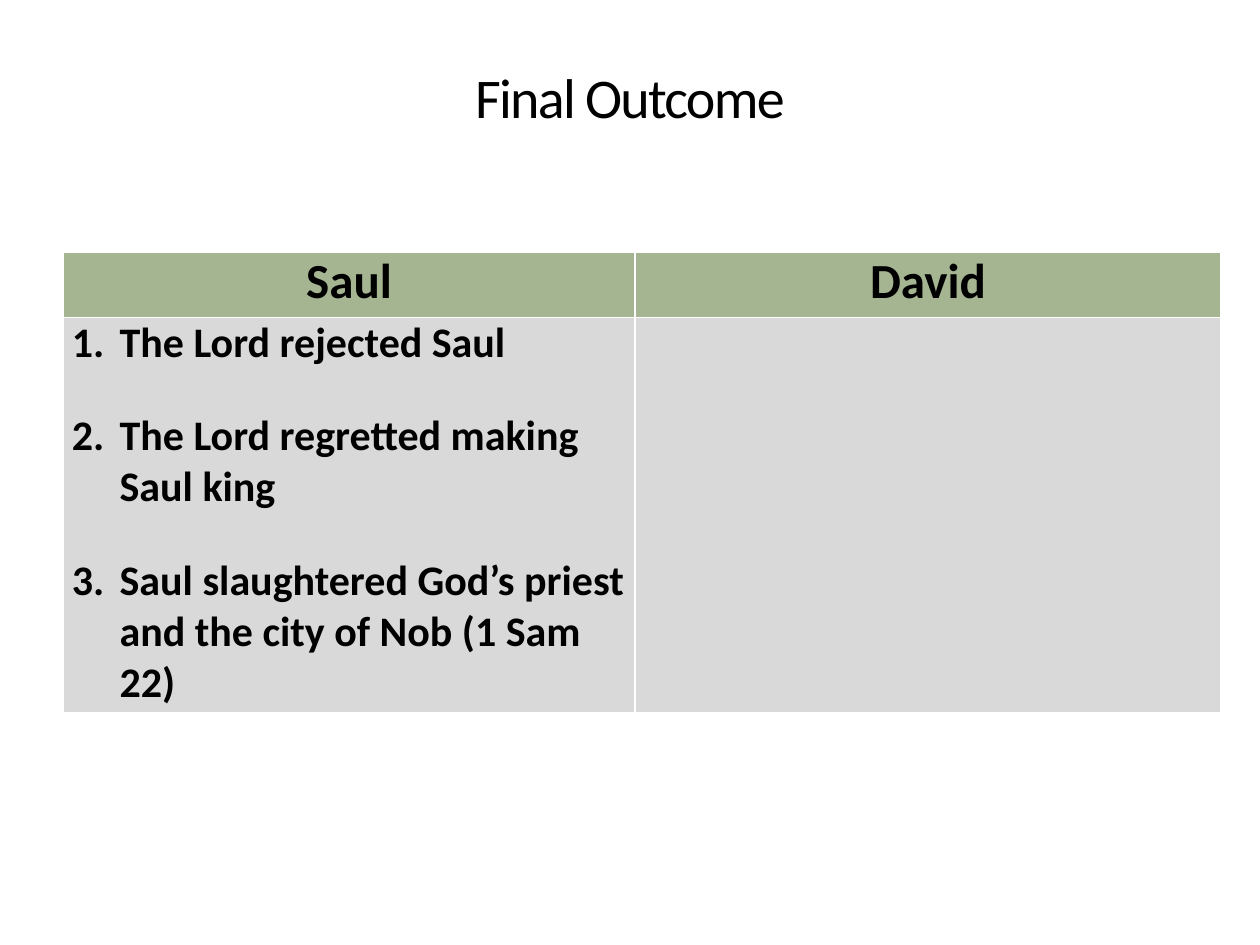
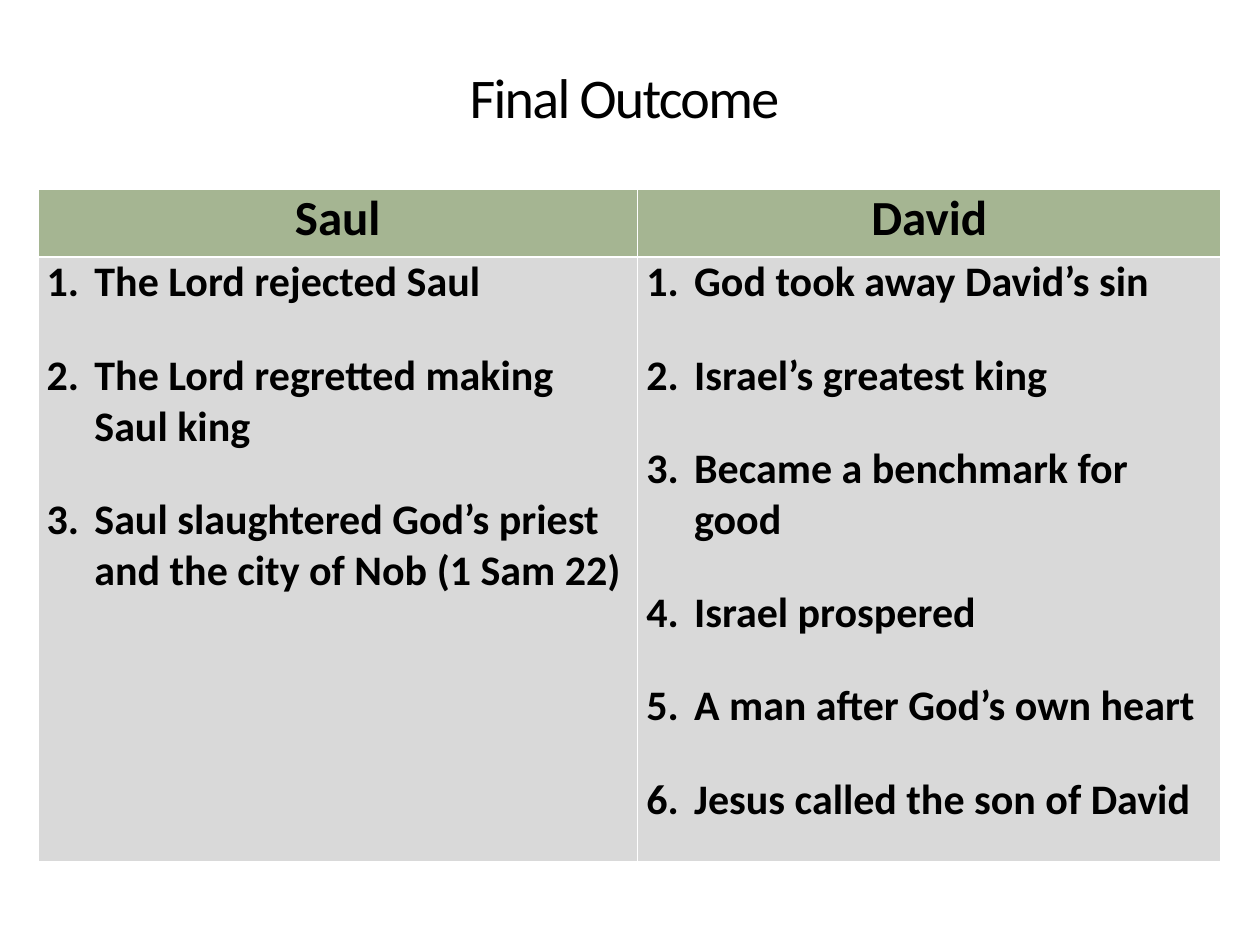
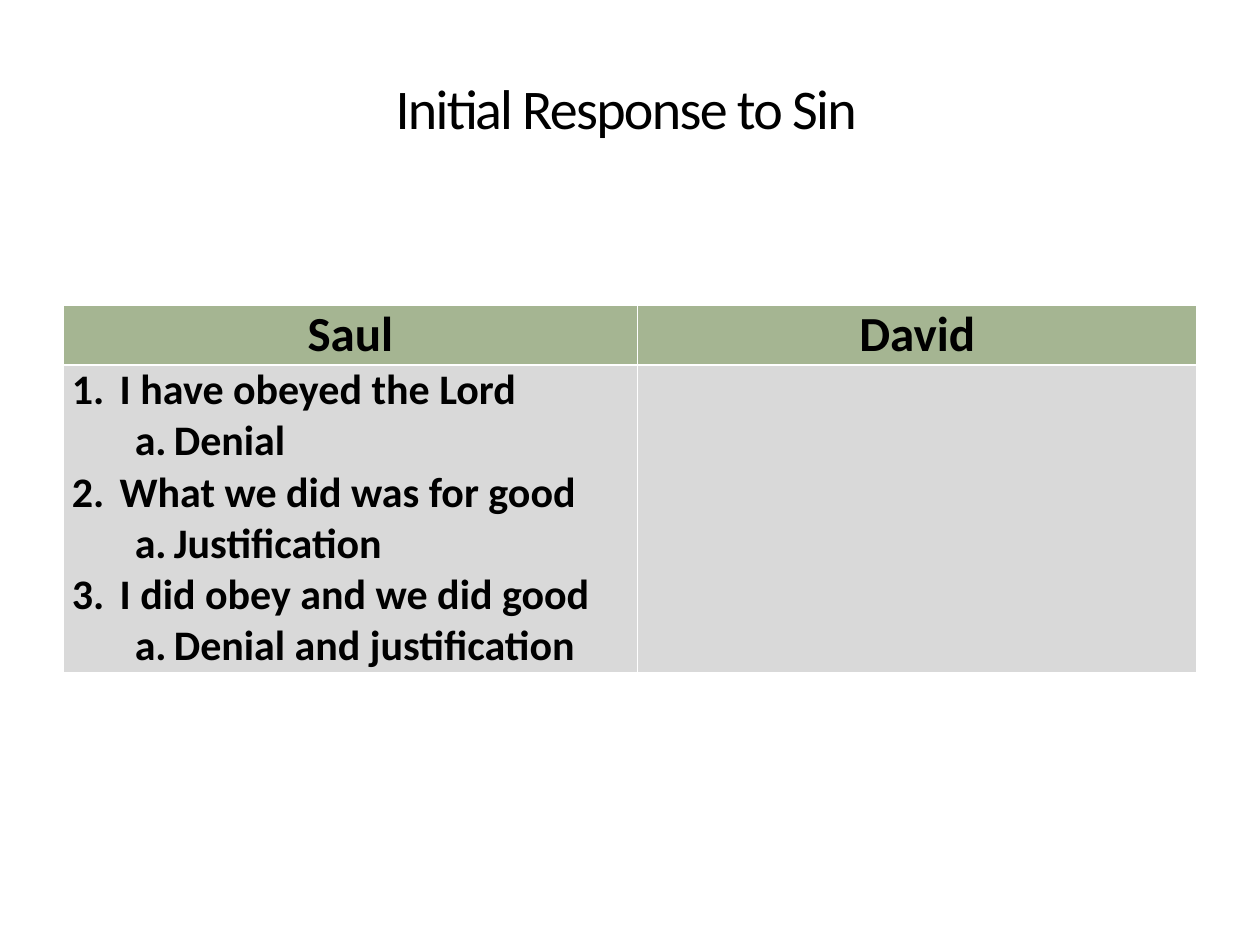
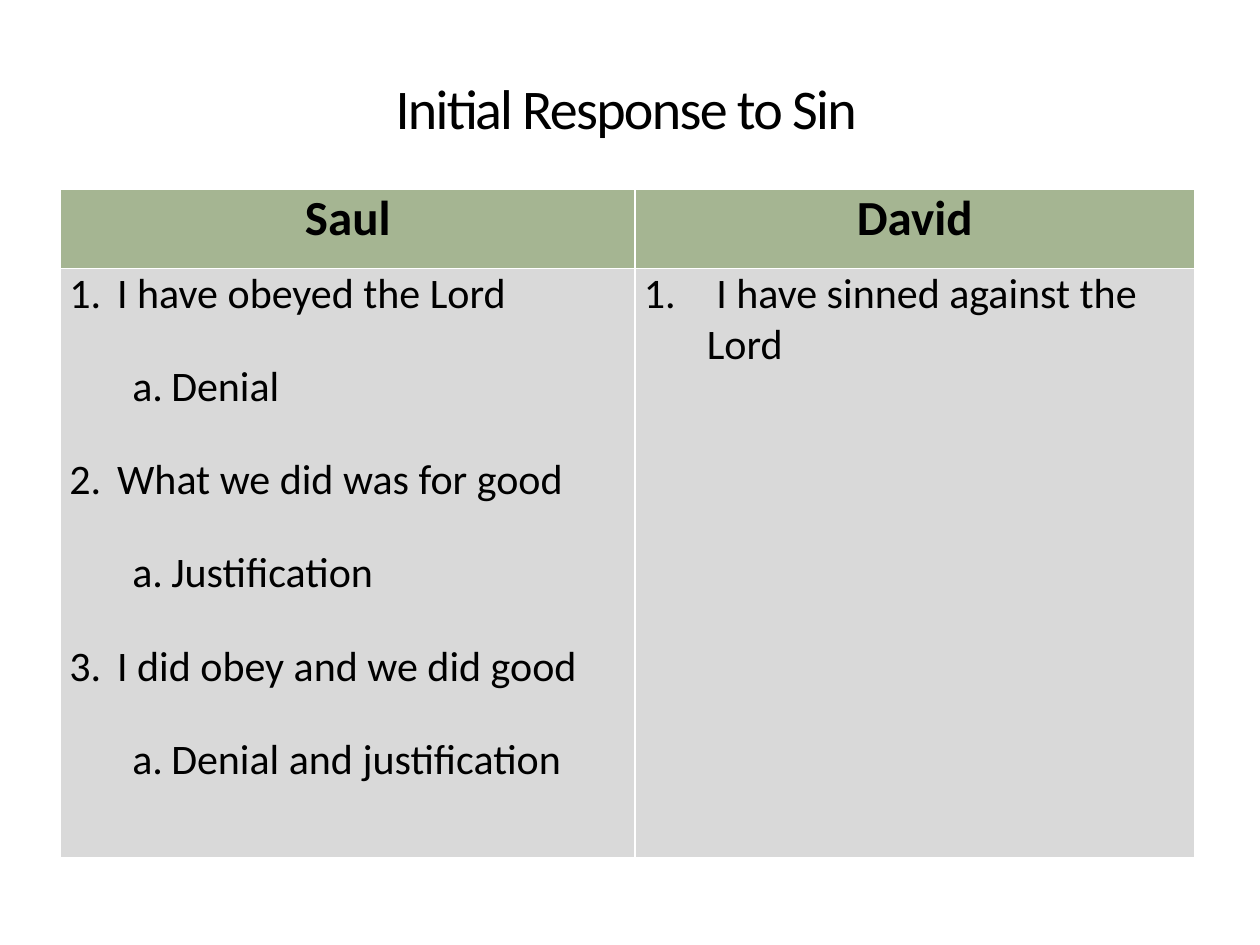
from dataclasses import dataclass

from lxml import etree
from pptx import Presentation
from pptx.dml.color import RGBColor
from pptx.enum.text import MSO_ANCHOR, PP_ALIGN
from pptx.oxml import parse_xml
from pptx.oxml.ns import nsdecls, qn
from pptx.util import Inches, Pt


@dataclass(frozen=True)
class Theme:
    font: str = "Calibri"
    text: RGBColor = RGBColor(0x00, 0x00, 0x00)
    header_fill: RGBColor = RGBColor(0xA5, 0xB5, 0x92)
    body_fill: RGBColor = RGBColor(0xD9, 0xD9, 0xD9)
    title_outline: str = "E0DDB1"
    title_size: int = 32
    header_size: int = 28
    list_size: int = 24
    cell_margin: float = 0.07
    item_gap: int = 12


THEME = Theme()
TITLE_ONLY = 5
HEADINGS = ("Saul", "David")

# Numbering scheme, left margin and hanging indent of each list level
LIST_LEVELS = (("arabicPeriod", 0.38, 0.38), ("alphaLcPeriod", 0.81, 0.31))
WIDE_LEVELS = (("arabicPeriod", 0.5, 0.5),)

# List items as (level, wording)
SAUL_OUTCOME = [
    (0, "The Lord rejected Saul"),
    (0, "The Lord regretted making Saul king"),
    (0, "Saul slaughtered God’s priest and the city of Nob (1 Sam 22)"),
]
DAVID_OUTCOME = [
    (0, "God took away David’s sin"),
    (0, "Israel’s greatest king"),
    (0, "Became a benchmark for good"),
    (0, "Israel prospered"),
    (0, "A man after God’s own heart"),
    (0, "Jesus called the son of David"),
]
SAUL_RESPONSE = [
    (0, "I have obeyed the Lord"),
    (1, "Denial"),
    (0, "What we did was for good"),
    (1, "Justification"),
    (0, "I did obey and we did good"),
    (1, "Denial and justification"),
]
DAVID_RESPONSE = [(0, " I have sinned against the Lord")]


def style_runs(paragraph, size, bold):
    for run in paragraph.runs:
        run.font.name = THEME.font
        run.font.size = Pt(size)
        run.font.bold = bold
        run.font.color.rgb = THEME.text


def add_title(slide, wording, left, top, width=9.38, height=0.75):
    title = slide.shapes.title
    title.left, title.top = Inches(left), Inches(top)
    title.width, title.height = Inches(width), Inches(height)
    title.text_frame.text = wording
    title.text_frame.vertical_anchor = MSO_ANCHOR.BOTTOM
    heading = title.text_frame.paragraphs[0]
    heading.alignment = PP_ALIGN.CENTER
    style_runs(heading, THEME.title_size, False)
    # Tight letter spacing and a faint outline
    properties = heading.runs[0].font._element
    properties.set("spc", "-100")
    properties.insert(0, parse_xml(
        f'<a:ln {nsdecls("a")} w="3175"><a:solidFill>'
        f'<a:srgbClr val="{THEME.title_outline}"><a:alpha val="25000"/></a:srgbClr>'
        '</a:solidFill><a:prstDash val="solid"/></a:ln>'))


def number_paragraph(paragraph, scheme, margin, hanging):
    properties = paragraph._p.get_or_add_pPr()
    properties.set("marL", str(Inches(margin)))
    properties.set("indent", str(-Inches(hanging)))
    etree.SubElement(properties, qn("a:buAutoNum")).set("type", scheme)


def fill_cell(cell, color):
    cell.fill.solid()
    cell.fill.fore_color.rgb = color
    cell.margin_left = cell.margin_right = Inches(THEME.cell_margin)
    cell.margin_top = cell.margin_bottom = 0


def fill_list(cell, items, levels, gap, bold):
    frame = cell.text_frame
    for index, (level, wording) in enumerate(items):
        item = frame.add_paragraph() if index else frame.paragraphs[0]
        item.text = wording
        item.level = level
        item.space_before = item.space_after = Pt(gap)
        number_paragraph(item, *levels[level])
        style_runs(item, THEME.list_size, bold)


def add_comparison(slide, left, top, columns, rows, lists, gap, bold, david_levels):
    table = slide.shapes.add_table(
        2, 2, Inches(left), Inches(top),
        Inches(sum(columns)), Inches(sum(rows))).table
    table.horz_banding = False
    for column, width in zip(table.columns, columns):
        column.width = Inches(width)
    for row, height in zip(table.rows, rows):
        row.height = Inches(height)

    # Header row
    for index, name in enumerate(HEADINGS):
        header = table.cell(0, index)
        fill_cell(header, THEME.header_fill)
        header.text_frame.text = name
        heading = header.text_frame.paragraphs[0]
        heading.alignment = PP_ALIGN.CENTER
        style_runs(heading, THEME.header_size, True)

    # Numbered lists; a lone item needs no gap
    for index, (items, levels) in enumerate(zip(lists, (LIST_LEVELS, david_levels))):
        body = table.cell(1, index)
        fill_cell(body, THEME.body_fill)
        fill_list(body, items, levels, gap if len(items) > 1 else 0, bold)


def add_comparison_slide(deck, title, title_at, table_at, columns, rows, lists,
                         gap=THEME.item_gap, bold=True, david_levels=LIST_LEVELS):
    slide = deck.slides.add_slide(deck.slide_layouts[TITLE_ONLY])
    add_title(slide, title, *title_at)
    add_comparison(slide, *table_at, columns, rows, lists, gap, bold, david_levels)


def main():
    deck = Presentation()
    deck.slide_width, deck.slide_height = Inches(10), Inches(7.5)
    outcome_at, response_at = (0.31, 0.33), (0.28, 0.42)
    response_columns = (4.56, 4.44)

    # Final outcome: Saul, then both
    add_comparison_slide(deck, "Final Outcome", outcome_at, (0.5, 2),
                         (4.54, 4.65), (0.52, 3.14), (SAUL_OUTCOME, []))
    add_comparison_slide(deck, "Final Outcome ", outcome_at, (0.3, 1.5),
                         (4.76, 4.63), (0.54, 4.8), (SAUL_OUTCOME, DAVID_OUTCOME))

    # Initial response: Saul, then both
    add_comparison_slide(deck, "Initial Response to Sin", response_at, (0.5, 2.42),
                         response_columns, (0.47, 2.4), (SAUL_RESPONSE, []), gap=0)
    add_comparison_slide(deck, "Initial Response to Sin", response_at, (0.48, 1.5),
                         response_columns, (0.63, 4.68),
                         (SAUL_RESPONSE, DAVID_RESPONSE),
                         bold=False, david_levels=WIDE_LEVELS)
    deck.save("out.pptx")


if __name__ == "__main__":
    main()
